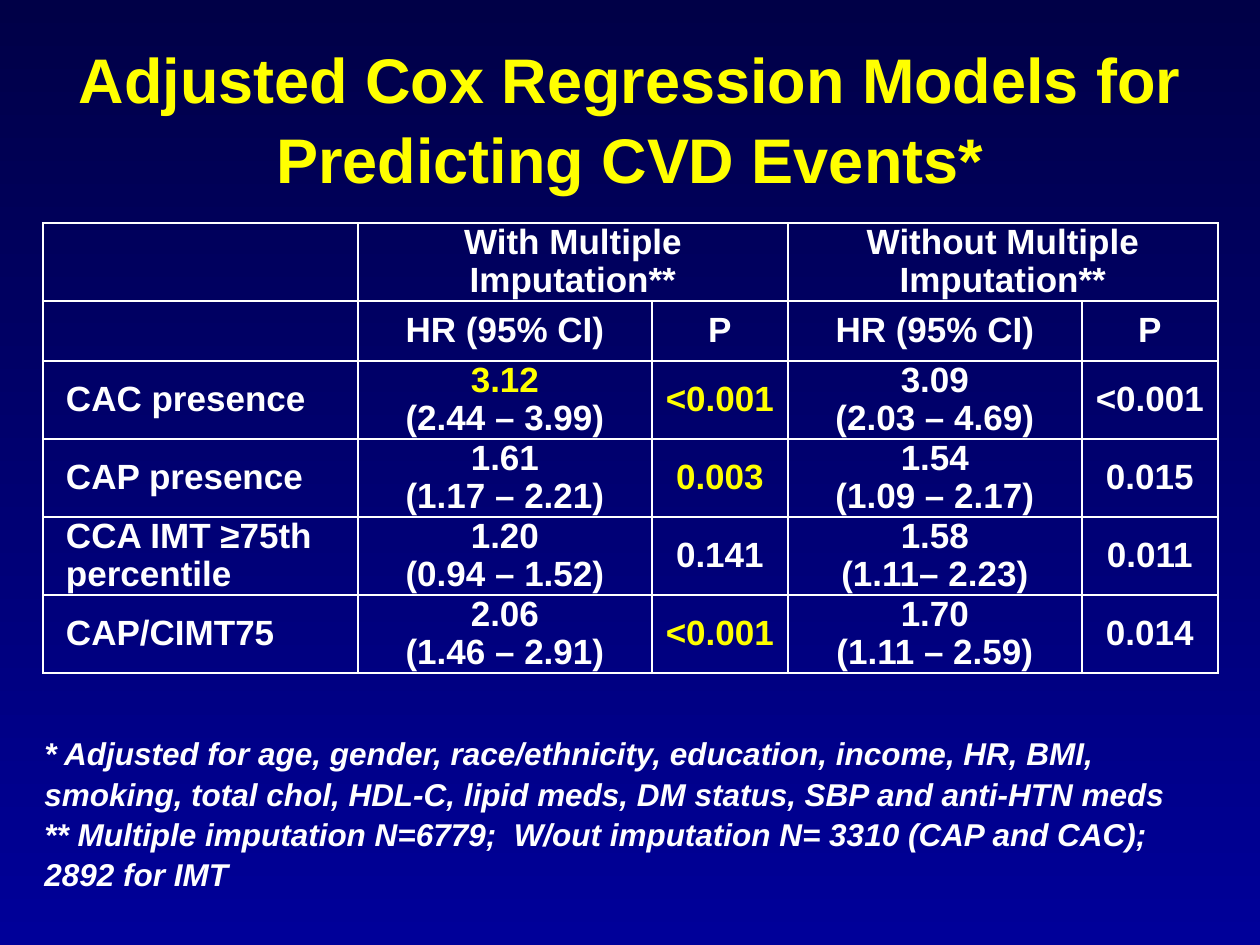
import pptx
import pptx.dml.color
import pptx.enum.text
import pptx.oxml
import pptx.oxml.ns
import pptx.util

PX = 914400 // 126
WHITE, YELLOW = "FFFFFF", "FFFF00"
ALIGN = pptx.enum.text.PP_ALIGN
MIDDLE = pptx.enum.text.MSO_ANCHOR.MIDDLE

COLUMN_WIDTHS = [315, 294, 136, 294, 136]
ROW_HEIGHTS = [78, 60, 78, 78, 78, 78]
RESULTS = [
    ["", "With Multiple Imputation**", "", "Without Multiple Imputation**", ""],
    ["", "HR (95% CI)", "P", "HR (95% CI)", "P"],
    ["CAC presence", "3.12\n(2.44 – 3.99)", "<0.001", "3.09\n(2.03 – 4.69)", "<0.001"],
    ["CAP presence", "1.61\n(1.17 – 2.21)", "0.003", "1.54\n(1.09 – 2.17)", "0.015"],
    ["CCA IMT ≥75th percentile", "1.20\n(0.94 – 1.52)", "0.141", "1.58\n(1.11– 2.23)", "0.011"],
    ["CAP/CIMT75", "2.06\n(1.46 – 2.91)", "<0.001", "1.70\n(1.11 – 2.59)", "0.014"],
]
HIGHLIGHTS = {(2, 1), (2, 2), (3, 2), (5, 2)}
FOOTNOTES = (
    "* Adjusted for age, gender, race/ethnicity, education, income, HR, BMI, "
    "smoking, total chol, HDL-C, lipid meds, DM status, SBP and anti-HTN meds\v"
    "** Multiple imputation N=6779;  W/out imputation N= 3310 (CAP and CAC); 2892 for IMT"
)


def px(length):
    """Turn px into EMU."""
    return pptx.util.Emu(length * PX)


def colour(value):
    """Turn a hex string into a colour."""
    return pptx.dml.color.RGBColor.from_string(value)


def assign(target, values):
    """Set attributes from a dict."""
    for name, value in values.items():
        setattr(target, name, value)


def format_para(para, size, shade, layout, italic=False):
    """Format a paragraph and its spans."""
    assign(para, layout)
    for span in para.runs:
        assign(span.font, {"name": "Arial", "size": pptx.util.Pt(size),
                           "bold": True, "italic": italic})
        span.font.color.rgb = colour(shade)


def paint_background(page):
    """Fill the page from dark to lighter blue, downwards."""
    fill = page.background.fill
    fill.gradient()
    fill.gradient_angle = 270
    for stop, shade in zip(fill.gradient_stops, ["000047", "000099"]):
        stop.color.rgb = colour(shade)


def add_title(page, text):
    """Fill and place the title placeholder."""
    box = page.shapes.title
    assign(box, {"left": px(63), "top": px(38), "width": px(1134), "height": px(157)})
    box.text_frame.text = text
    assign(box.text_frame, {"word_wrap": True, "vertical_anchor": MIDDLE})
    format_para(box.text_frame.paragraphs[0], 36, YELLOW,
                {"alignment": ALIGN.CENTER, "line_spacing": 1.05})


def add_borders(cell):
    """Draw thin white lines around a cell."""
    properties = cell._tc.get_or_add_tcPr()
    namespace = pptx.oxml.ns.nsdecls("a")
    for position, side in enumerate(["lnL", "lnR", "lnT", "lnB"]):
        line = pptx.oxml.parse_xml(
            f'<a:{side} {namespace} w="12700"><a:solidFill>'
            f'<a:srgbClr val="{WHITE}"/></a:solidFill></a:{side}>')
        properties.insert(position, line)


def format_cell(cell, text, is_label, is_highlighted):
    """Fill in and format one table cell."""
    cell.fill.background()
    add_borders(cell)
    assign(cell, {"vertical_anchor": MIDDLE, "margin_left": px(23 if is_label else 9),
                  "margin_right": px(9), "margin_top": 0, "margin_bottom": 0})
    cell.text_frame.text = text
    layout = {"alignment": ALIGN.LEFT if is_label else ALIGN.CENTER, "line_spacing": 0.97}
    for index, para in enumerate(cell.text_frame.paragraphs):
        shade = YELLOW if is_highlighted and index == 0 else WHITE
        format_para(para, 20, shade, layout)


def add_results(page):
    """Add the table of hazard ratios."""
    frame = page.shapes.add_table(
        len(ROW_HEIGHTS), len(COLUMN_WIDTHS), px(43), px(223),
        px(sum(COLUMN_WIDTHS)), px(sum(ROW_HEIGHTS)))
    table = frame.table
    assign(table, {"first_row": False, "horz_banding": False})
    for column, width in zip(table.columns, COLUMN_WIDTHS):
        column.width = px(width)
    for row, height in zip(table.rows, ROW_HEIGHTS):
        row.height = px(height)
    for r, texts in enumerate(RESULTS):
        for c, text in enumerate(texts):
            format_cell(table.cell(r, c), text, c == 0, (r, c) in HIGHLIGHTS)
    for c in (1, 3):
        table.cell(0, c).merge(table.cell(0, c + 1))


def add_footnotes(page, text):
    """Add the notes below the table."""
    box = page.shapes.add_textbox(px(32), px(725), px(1197), px(175))
    box.text_frame.text = text.replace("\v", "")
    para = box.text_frame.paragraphs[0]
    para.text = text
    assign(box.text_frame, {"word_wrap": True, "vertical_anchor": MIDDLE})
    format_para(para, 18, WHITE, {"line_spacing": pptx.util.Pt(23),
                                  "space_before": pptx.util.Pt(6)}, italic=True)


def main():
    """Build and save the deck."""
    deck = pptx.Presentation()
    assign(deck, {"slide_width": px(1260), "slide_height": px(945)})
    page = deck.slides.add_slide(deck.slide_layouts[5])
    paint_background(page)
    add_results(page)
    add_title(page, "Adjusted Cox Regression Models for Predicting CVD Events*")
    add_footnotes(page, FOOTNOTES)
    deck.save("out.pptx")


if __name__ == "__main__":
    main()
